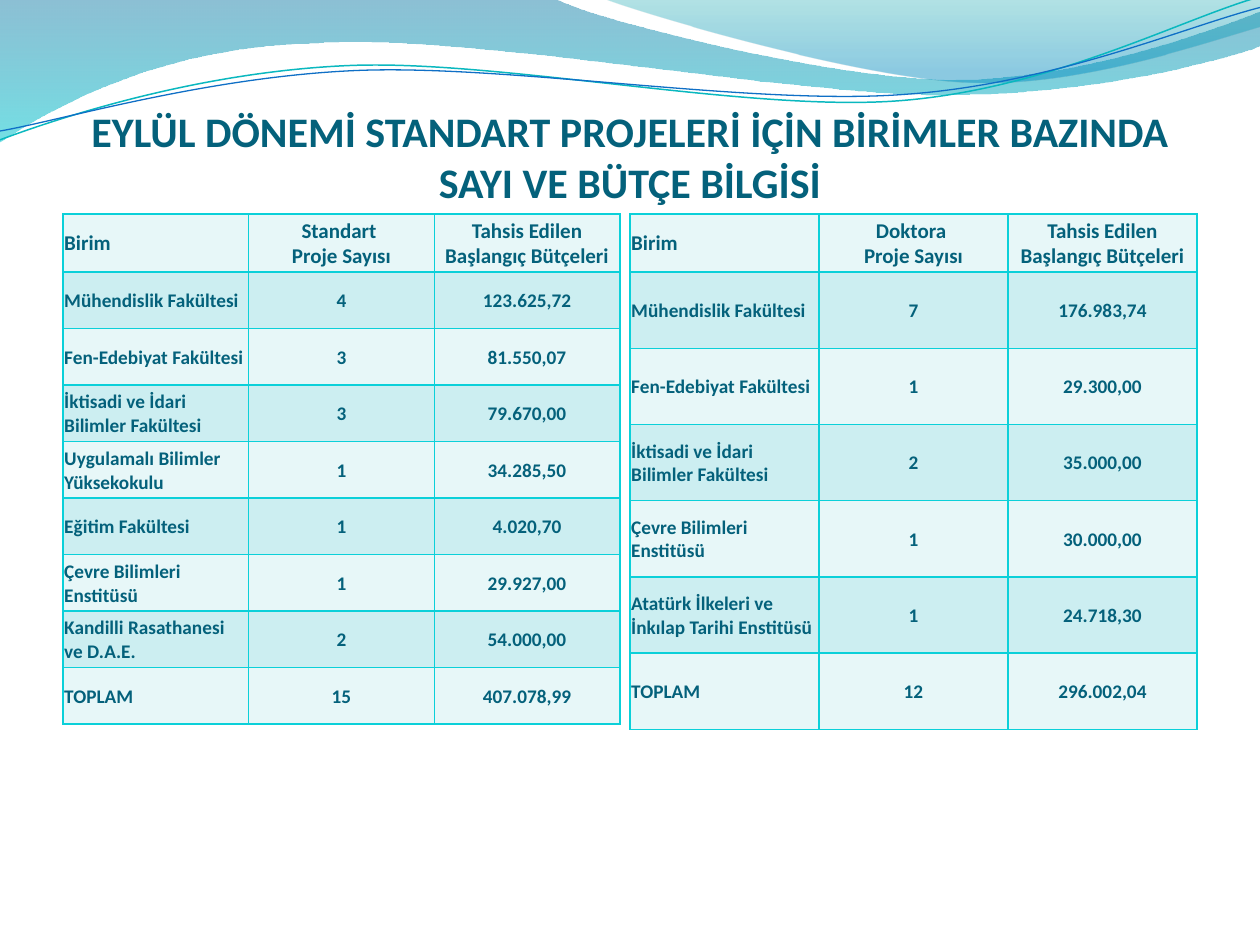
import dataclasses
import math
from typing import Optional

import lxml.etree
import pptx
import pptx.dml.color
import pptx.enum.text
import pptx.oxml.ns
import pptx.util

Inches, Pt = pptx.util.Inches, pptx.util.Pt
qn = pptx.oxml.ns.qn
ALIGN, ANCHOR = pptx.enum.text.PP_ALIGN, pptx.enum.text.MSO_ANCHOR


@dataclasses.dataclass(frozen=True)
class Theme:
    font: str = "Calibri"
    ink: str = "04617B"
    border: str = "0BD0D9"
    bands: tuple = ("E7F7F8", "CCEEF1")
    border_pt: float = 1
    title_pt: int = 24
    head_pt: int = 12
    body_pt: int = 11


@dataclasses.dataclass(frozen=True)
class Stop:
    position: float
    color: str
    alpha: int  # percent opaque


@dataclasses.dataclass(frozen=True)
class Wave:
    """Path steps hold one point for a line, three for a Bezier curve."""
    start: tuple
    steps: tuple
    stops: tuple = ()
    line: Optional[tuple] = None  # colour, width in points
    center: tuple = (0, 0)
    tilt: float = 0  # degrees clockwise about the center


@dataclasses.dataclass(frozen=True)
class BudgetTable:
    left: float
    width: float
    height: float
    kind: str
    rows: tuple


THEME = Theme()
TITLE = "EYLÜL DÖNEMİ STANDART PROJELERİ İÇİN BİRİMLER BAZINDA SAYI VE BÜTÇE BİLGİSİ"
TABLE_TOP, HEAD_HEIGHT = 1.7, 0.46

WAVES = (
    Wave((0, 0), (
        (4.4, -0.01),
        (4.76, 0.17, 6.64, 0.63, 7.58, 0.63),
        (8.53, 0.63, 9.58, 0.26, 10, 0.09),
        (10.01, 0.36),
        (9.83, 0.44, 8.7, 0.76, 7.46, 0.75),
        (6.22, 0.75, 3.82, 0.28, 2.57, 0.34),
        (1.29, 0.36, 0.46, 0.83, -0.01, 1.13)),
        stops=(Stop(0, "0074A1", 45), Stop(1, "00C6CF", 55))),
    Wave((4.79, -0.01), (
        (5.09, 0.11, 6.82, 0.62, 7.69, 0.65),
        (8.56, 0.69, 9.61, 0.32, 10, 0.21),
        (10, 0)),
        stops=(Stop(0, "00A1A9", 30), Stop(0.8, "008BBF", 45))),
    Wave((0, 1.11), (
        (0.48, 0.93, 1.58, 0.57, 2.77, 0.52),
        (3.95, 0.47, 5.93, 0.89, 7.13, 0.8),
        (8.33, 0.71, 9.38, 0.15, 9.98, -0.02)),
        line=("0AB8BF", 0.85), center=(4.99, 0.58), tilt=-2.7),
    Wave((0, 1.04), (
        (0.47, 0.96, 1.64, 0.61, 2.83, 0.56),
        (4.03, 0.51, 5.97, 0.84, 7.17, 0.75),
        (8.36, 0.67, 9.41, 0.21, 10, 0.06)),
        line=("0F6FC6", 0.75), center=(5, 0.59), tilt=-2.7),
)

TABLES = (
    BudgetTable(0.5, 4.42, 4.05, "Standart", (
        ("Mühendislik Fakültesi", "4", "123.625,72"),
        ("Fen-Edebiyat Fakültesi", "3", "81.550,07"),
        ("İktisadi ve İdari Bilimler Fakültesi", "3", "79.670,00"),
        ("Uygulamalı Bilimler Yüksekokulu", "1", "34.285,50"),
        ("Eğitim Fakültesi", "1", "4.020,70"),
        ("Çevre Bilimleri Enstitüsü", "1", "29.927,00"),
        ("Kandilli Rasathanesi ve D.A.E.", "2", "54.000,00"),
        ("TOPLAM", "15", "407.078,99"))),
    BudgetTable(5, 4.5, 4.09, "Doktora", (
        ("Mühendislik Fakültesi", "7", "176.983,74"),
        ("Fen-Edebiyat Fakültesi", "1", "29.300,00"),
        ("İktisadi ve İdari Bilimler Fakültesi", "2", "35.000,00"),
        ("Çevre Bilimleri Enstitüsü", "1", "30.000,00"),
        ("Atatürk İlkeleri ve İnkılap Tarihi Enstitüsü", "1", "24.718,30"),
        ("TOPLAM", "12", "296.002,04"))),
)


def rgb(color: str) -> pptx.dml.color.RGBColor:
    return pptx.dml.color.RGBColor.from_string(color)


def apply(obj, values: dict) -> None:
    for name, value in values.items():
        setattr(obj, name, value)


def format_text(tf, size: int, align) -> None:
    for p in tf.paragraphs:
        p.alignment = align
        for r in p.runs:
            apply(r.font, {"name": THEME.font, "size": Pt(size), "bold": True})
            r.font.color.rgb = rgb(THEME.ink)


def level_point(wave: Wave, x: float, y: float) -> tuple:
    """Undo the tilt, which the shape's own rotation puts back."""
    (cx, cy), a = wave.center, math.radians(-wave.tilt)
    dx, dy = x - cx, y - cy
    return (Inches(cx + dx * math.cos(a) - dy * math.sin(a)),
            Inches(cy + dx * math.sin(a) + dy * math.cos(a)))


def curve_segments(sp, wave: Wave) -> None:
    """Join each three line segments of a curve step into one Bezier."""
    segments = iter(list(sp._element.iter(qn("a:lnTo"))))
    for step in wave.steps:
        first = next(segments)
        if len(step) == 2:
            continue
        first.tag = qn("a:cubicBezTo")
        for _ in range(2):
            other = next(segments)
            first.append(other[0])
            other.getparent().remove(other)


def draw_wave(slide, wave: Wave) -> None:
    points = [level_point(wave, *step[i:i + 2])
              for step in (wave.start, *wave.steps) for i in range(0, len(step), 2)]
    fb = slide.shapes.build_freeform(*points[0])
    fb.add_line_segments(points[1:], close=bool(wave.stops))
    sp = fb.convert_to_shape()
    curve_segments(sp, wave)
    sp.shadow.inherit = False
    sp.rotation = wave.tilt
    if wave.line:
        color, width = wave.line
        sp.fill.background()
        sp.line.color.rgb = rgb(color)
        sp.line.width = Pt(width)
        return
    sp.line.fill.background()
    sp.fill.gradient()
    sp.fill.gradient_angle = 270
    for gs, stop in zip(sp.fill.gradient_stops, wave.stops):
        gs.position = stop.position
        gs.color.rgb = rgb(stop.color)
    # Transparency of each gradient stop
    for clr, stop in zip(sp._element.spPr.iter(qn("a:srgbClr")), wave.stops):
        lxml.etree.SubElement(clr, qn("a:alpha"), val=str(stop.alpha * 1000))


def set_borders(cell) -> None:
    tcPr = cell._tc.get_or_add_tcPr()
    for i, side in enumerate(("lnL", "lnR", "lnT", "lnB")):
        ln = tcPr.makeelement(qn(f"a:{side}"), {"w": str(Pt(THEME.border_pt))})
        fill = lxml.etree.SubElement(ln, qn("a:solidFill"))
        lxml.etree.SubElement(fill, qn("a:srgbClr"), val=THEME.border)
        tcPr.insert(i, ln)


def draw_table(slide, spec: BudgetTable) -> None:
    header = ("Birim", f"{spec.kind} \nProje Sayısı", "Tahsis Edilen Başlangıç Bütçeleri")
    rows = (header, *spec.rows)
    tbl = slide.shapes.add_table(len(rows), len(header), Inches(spec.left), Inches(TABLE_TOP),
                                 Inches(spec.width), Inches(spec.height)).table
    apply(tbl, {"first_row": False, "horz_banding": False})
    body_height = (spec.height - HEAD_HEIGHT) / len(spec.rows)
    inset = Inches(0.01)
    for i, row in enumerate(rows):
        tbl.rows[i].height = Inches(body_height if i else HEAD_HEIGHT)
        for j, text in enumerate(row):
            cell = tbl.cell(i, j)
            cell.text = text
            apply(cell, {"margin_left": inset, "margin_top": inset, "margin_right": inset,
                         "margin_bottom": 0, "vertical_anchor": ANCHOR.MIDDLE})
            format_text(cell.text_frame, THEME.body_pt if i else THEME.head_pt,
                        ALIGN.CENTER if j else ALIGN.LEFT)
            cell.fill.solid()
            cell.fill.fore_color.rgb = rgb(THEME.bands[i % 2])
            set_borders(cell)


def main() -> None:
    prs = pptx.Presentation()
    apply(prs, {"slide_width": Inches(10), "slide_height": Inches(7.5)})
    slide = prs.slides.add_slide(prs.slide_layouts[5])

    # Wave decoration along the top
    for wave in WAVES:
        draw_wave(slide, wave)

    # Title, in front of the waves
    title = slide.shapes.title
    slide.shapes._spTree.append(title._element)
    apply(title, {"left": Inches(0.5), "top": Inches(0.77),
                  "width": Inches(9), "height": Inches(0.87)})
    tf = title.text_frame
    tf.text = TITLE
    apply(tf, {"margin_left": 0, "margin_top": Inches(0.05), "margin_right": 0,
               "margin_bottom": 0, "word_wrap": True, "vertical_anchor": ANCHOR.BOTTOM,
               "auto_size": pptx.enum.text.MSO_AUTO_SIZE.NONE})
    format_text(tf, THEME.title_pt, ALIGN.CENTER)

    # Budget tables side by side
    for spec in TABLES:
        draw_table(slide, spec)

    prs.save("out.pptx")


if __name__ == "__main__":
    main()
